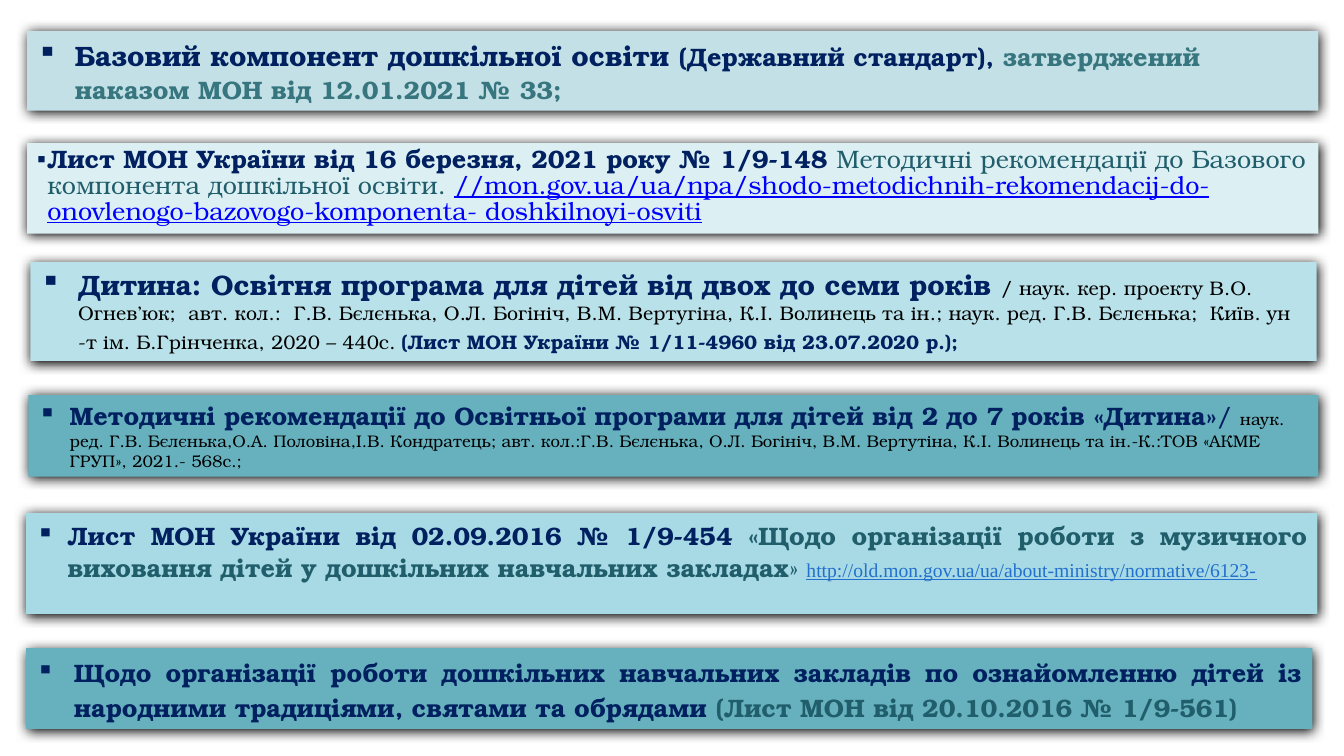
from lxml import etree
from pptx import Presentation
from pptx.dml.color import RGBColor
from pptx.enum import shapes, text
from pptx.oxml import ns
from pptx.util import Pt

SERIF = "TeX Gyre Bonum"
NAVY = "002060"
TEAL = "215E6B"
BLACK = "000000"


def rgb(value):
    return RGBColor.from_string(value)


def add_text(paragraph, words, size=18, color=NAVY, bold=True, underline=False, font=SERIF):
    run = paragraph.add_run()
    run.text = words
    run.font.name = font
    run.font.size = Pt(size)
    run.font.bold = bold
    run.font.underline = underline
    run.font.color.rgb = rgb(color)


def add_glow(card):
    card.shadow.inherit = False
    effects = card._element.spPr.find(ns.qn("a:effectLst"))
    shadow = etree.SubElement(effects, ns.qn("a:outerShdw"), blurRad=str(Pt(8.5)),
                              dist=str(Pt(1)), dir="5400000", algn="t", rotWithShape="0")
    etree.SubElement(shadow, ns.qn("a:srgbClr"), val=BLACK)


def set_bullet(paragraph, indent):
    properties = paragraph._p.get_or_add_pPr()
    properties.set("marL", str(Pt(indent)))
    properties.set("indent", str(-Pt(indent)))
    etree.SubElement(properties, ns.qn("a:buChar"), char="▪")


def document_card(card, box, fill, indent, pieces, spacing=1.0, justified=False):
    card.left, card.top, card.width, card.height = [Pt(length) for length in box]
    card.fill.solid()
    card.fill.fore_color.rgb = rgb(fill)
    card.line.fill.background()
    add_glow(card)
    frame = card.text_frame
    frame.word_wrap = True
    frame.auto_size = text.MSO_AUTO_SIZE.NONE
    frame.vertical_anchor = text.MSO_ANCHOR.TOP
    frame.margin_left = frame.margin_right = Pt(7.2)
    frame.margin_top = frame.margin_bottom = Pt(3.6)
    entry = frame.paragraphs[0]
    set_bullet(entry, indent)
    entry.alignment = text.PP_ALIGN.JUSTIFY if justified else text.PP_ALIGN.LEFT
    entry.line_spacing = spacing
    entry.space_before = entry.space_after = Pt(0)
    for words, style in pieces:
        add_text(entry, words, **style)


DOCUMENTS = [
    dict(box=(19.4, 22.2, 922.3, 56.9), fill="C2E0E5", indent=27, spacing=1.07, pieces=[
        ("Базовий компонент дошкільної освіти ", dict(size=20)),
        ("(Державний стандарт), ", {}),
        ("затверджений наказом МОН від 12.01.2021 № 33;", dict(color="37757F")),
    ]),
    dict(box=(19.4, 102.2, 922.3, 64.8), fill="DCF0F4", indent=7.2, spacing=0.85, pieces=[
        ("Лист МОН України від 16 березня, 2021 року № 1/9-148 ", {}),
        ("Методичні рекомендації до Базового компонента дошкільної освіти. ",
         dict(color=TEAL, bold=False)),
        ("//mon.gov.ua/ua/npa/shodo-metodichnih-rekomendacij-do-onovlenogo-bazovogo-"
         "komponenta- doshkilnoyi-osviti",
         dict(color="0000FF", bold=False, underline=True)),
    ]),
    dict(box=(21.8, 187.2, 918.7, 70.6), fill="B9E1E9", indent=27, pieces=[
        ("Дитина: Освітня програма для дітей від двох до семи років ", dict(size=20)),
        ("/ наук. кер. проекту В.О. Огнев’юк;  авт. кол.:  Г.В. Бєлєнька, О.Л. Богініч, "
         "В.М. Вертугіна, К.І. Волинець та ін.; наук. ред. Г.В. Бєлєнька;  Київ. ун -т "
         "ім. Б.Грінченка, 2020 – 440с.", dict(size=14, color=BLACK, bold=False)),
        (" ", dict(color=BLACK, bold=False, font="Calibri")),
        ("(Лист МОН України № 1/11-4960 від 23.07.2020 р.);", dict(size=14)),
    ]),
    dict(box=(20.2, 282.2, 921.6, 58.3), fill="66B1BD", indent=22.5, pieces=[
        ("Методичні рекомендації до Освітньої програми для дітей від 2 до 7 років «Дитина»", {}),
        ("/ ", dict(bold=False)),
        ("наук. ред. Г.В. Бєлєнька,О.А. Половіна,І.В. Кондратець; авт. кол.:Г.В. Бєлєнька, "
         "О.Л. Богініч, В.М. Вертутіна, К.І. Волинець та ін.-К.:ТОВ «АКМЕ ГРУП», 2021.- 568с.;",
         dict(size=12, color=BLACK, bold=False)),
    ]),
    dict(box=(18.7, 366.5, 922.3, 72), fill="A7DAE4", indent=22.5, spacing=1.07,
         justified=True, pieces=[
        ("Лист МОН України від 02.09.2016 № 1/9-454 ", {}),
        ("«Щодо організації роботи з музичного виховання дітей у дошкільних навчальних закладах",
         dict(color=TEAL)),
        ("» ", dict(color=TEAL, bold=False)),
        ("http://old.mon.gov.ua/ua/about-ministry/normative/6123-",
         dict(size=14, color="2370CD", bold=False, underline=True, font="Times New Roman")),
    ]),
    dict(box=(18.7, 463, 918.7, 57.6), fill="66B1BD", indent=27, spacing=1.15,
         justified=True, pieces=[
        ("Щодо організації роботи дошкільних навчальних закладів по ознайомленню дітей із "
         "народними традиціями, святами та обрядами ", {}),
        ("(Лист МОН від 20.10.2016 № 1/9-561)", dict(color=TEAL)),
    ]),
]
LETTER = 1


def main():
    deck = Presentation()
    deck.slide_width, deck.slide_height = Pt(960), Pt(540)
    slide = deck.slides.add_slide(deck.slide_layouts[1])
    heading = slide.shapes.title._element
    heading.getparent().remove(heading)
    for position, document in enumerate(DOCUMENTS):
        if position == LETTER:
            card = slide.placeholders[1]
        else:
            card = slide.shapes.add_shape(shapes.MSO_SHAPE.RECTANGLE, 0, 0, 0, 0)
        document_card(card, **document)
    deck.save("out.pptx")


if __name__ == "__main__":
    main()
